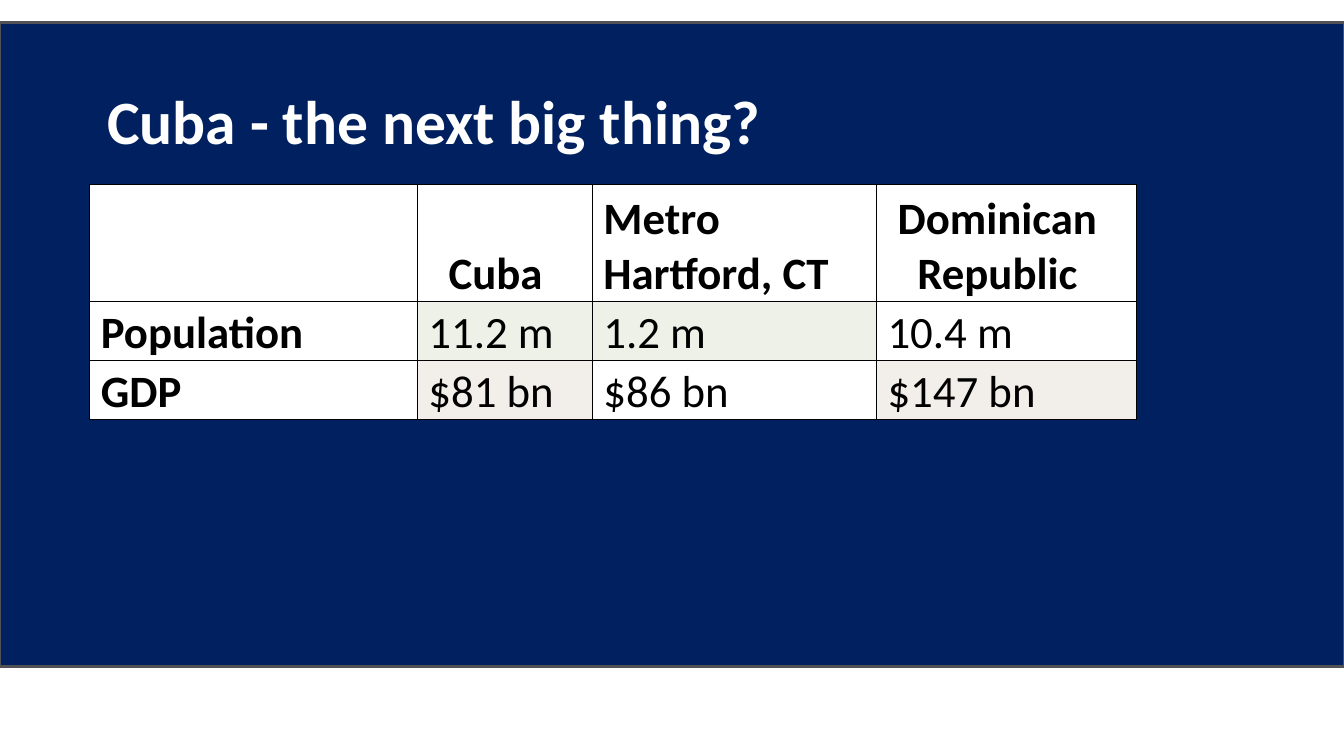
from pptx import Presentation
from pptx.dml.color import RGBColor
from pptx.enum.shapes import MSO_SHAPE
from pptx.enum.text import MSO_ANCHOR, PP_ALIGN
from pptx.oxml import parse_xml
from pptx.oxml.ns import nsdecls
from pptx.util import Pt

NAVY = RGBColor(0x00, 0x20, 0x60)
GREY = RGBColor(0x52, 0x52, 0x56)
WHITE = RGBColor(0xFF, 0xFF, 0xFF)
BLACK = RGBColor(0x00, 0x00, 0x00)
GREEN_TINT = RGBColor(0xED, 0xF1, 0xE7)
SAND_TINT = RGBColor(0xF2, 0xEF, 0xEA)

COLUMN_WIDTHS = [234, 125, 203, 186]
ROW_HEIGHTS = [84, 42, 42]
COUNTRY_ROWS = [
    ["", "Cuba", "Metro\nHartford, CT", "Dominican\nRepublic"],
    ["Population", "11.2 m", "1.2 m", "10.4 m"],
    ["GDP", "$81 bn", "$86 bn", "$147 bn"],
]
TINTS = {(1, 1): GREEN_TINT, (1, 2): GREEN_TINT,
         (2, 1): SAND_TINT, (2, 3): SAND_TINT}
CENTRED_HEADINGS = ["Cuba", "Dominican\nRepublic"]


def set_font(paragraph, size, color, bold):
    paragraph.font.name = "Calibri"
    paragraph.font.size = Pt(size)
    paragraph.font.color.rgb = color
    paragraph.font.bold = bold


def add_borders(cell):
    properties = cell._tc.get_or_add_tcPr()
    for side in ("lnL", "lnR", "lnT", "lnB"):
        properties.append(parse_xml(
            f'<a:{side} {nsdecls("a")} w="{Pt(1)}"><a:solidFill>'
            f'<a:srgbClr val="{BLACK}"/></a:solidFill></a:{side}>'))


presentation = Presentation()
presentation.slide_width = Pt(960)
presentation.slide_height = Pt(540)
slide = presentation.slides.add_slide(presentation.slide_layouts[6])

# Navy panel
panel = slide.shapes.add_shape(
    MSO_SHAPE.RECTANGLE, Pt(0), Pt(16), Pt(960), Pt(460))
panel.shadow.inherit = False
panel.fill.solid()
panel.fill.fore_color.rgb = NAVY
panel.line.color.rgb = GREY
panel.line.width = Pt(2)

# Comparison table
comparison = slide.shapes.add_table(
    len(ROW_HEIGHTS), len(COLUMN_WIDTHS), Pt(64), Pt(131.5),
    Pt(sum(COLUMN_WIDTHS)), Pt(sum(ROW_HEIGHTS))).table
for column, width in zip(comparison.columns, COLUMN_WIDTHS):
    column.width = Pt(width)
for row, height in zip(comparison.rows, ROW_HEIGHTS):
    row.height = Pt(height)

for r, entries in enumerate(COUNTRY_ROWS):
    for c, entry in enumerate(entries):
        cell = comparison.cell(r, c)
        centred = entry in CENTRED_HEADINGS
        add_borders(cell)
        cell.fill.solid()
        cell.fill.fore_color.rgb = TINTS.get((r, c), WHITE)
        cell.vertical_anchor = MSO_ANCHOR.BOTTOM
        cell.margin_left = Pt(0 if centred else 8)
        cell.margin_right = Pt(13 if centred else 0)
        cell.margin_top = Pt(0.5)
        cell.margin_bottom = Pt(0)
        cell.text = entry
        for paragraph in cell.text_frame.paragraphs:
            paragraph.alignment = PP_ALIGN.CENTER if centred else PP_ALIGN.LEFT
            set_font(paragraph, 32, BLACK, r == 0 or c == 0)

# Title
title = slide.shapes.add_textbox(Pt(69.5), Pt(56), Pt(712), Pt(60.5)).text_frame
title.word_wrap = True
title.text = "Cuba - the next big thing?"
set_font(title.paragraphs[0], 44, WHITE, True)

presentation.save("out.pptx")
